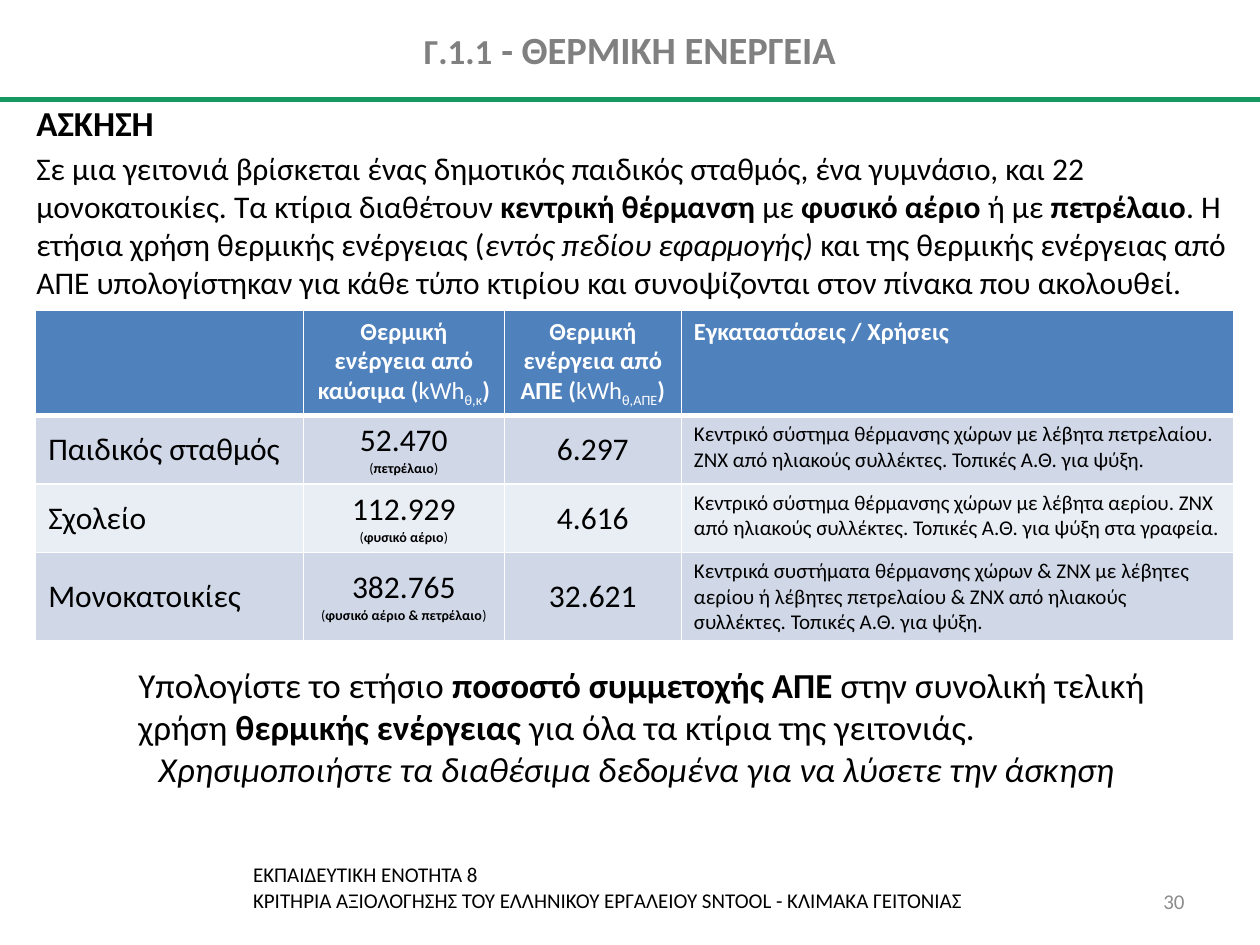
"""Builds the thermal energy exercise slide with its table of buildings."""
from lxml.etree import SubElement
from pptx import Presentation
from pptx.dml.color import RGBColor
from pptx.enum.shapes import MSO_CONNECTOR
from pptx.enum.text import MSO_ANCHOR, PP_ALIGN
from pptx.oxml.ns import qn
from pptx.util import Pt

FONT = "Calibri"
COLORS = {
    "text": "000000", "title": "808080", "number": "8C8C8C", "rule": "159961",
    "white": "FFFFFF", "header": "4F81BD", "odd": "D0D8E8", "even": "E9EDF4",
}
ALIGN = {"left": PP_ALIGN.LEFT, "center": PP_ALIGN.CENTER, "right": PP_ALIGN.RIGHT}

TITLE = [("Γ.1.1", "b", 20), (" - ΘΕΡΜΙΚΗ ΕΝΕΡΓΕΙΑ", "b", 22)]
HEADING = [("ΑΣΚΗΣΗ", "b", 20)]
EXERCISE = [
    ("Σε μια γειτονιά βρίσκεται ένας δημοτικός παιδικός σταθμός, ένα γυμνάσιο, "
     "και 22 μονοκατοικίες. Τα κτίρια διαθέτουν ", "", 18),
    ("κεντρική θέρμανση ", "b", 18),
    ("με", "", 18),
    (" φυσικό αέριο ", "b", 18),
    ("ή με ", "", 18),
    ("πετρέλαιο", "b", 18),
    (". Η ετήσια χρήση θερμικής ενέργειας (", "", 18),
    ("εντός πεδίου εφαρμογής) ", "i", 18),
    ("και της θερμικής ενέργειας από ΑΠΕ υπολογίστηκαν για κάθε τύπο κτιρίου "
     "και συνοψίζονται στον πίνακα που ακολουθεί.", "", 18),
]
QUESTION = [
    ("Υπολογίστε το ετήσιο ", "", 20),
    ("ποσοστό συμμετοχής ΑΠΕ ", "b", 20),
    ("στην συνολική τελική χρήση ", "", 20),
    ("θερμικής ενέργειας ", "b", 20),
    ("για όλα τα κτίρια της γειτονιάς.", "", 20),
]
HINT = [("Χρησιμοποιήστε τα διαθέσιμα δεδομένα για να λύσετε την άσκηση", "i", 20)]
FOOTER = [
    "ΕΚΠΑΙΔΕΥΤΙΚΗ ΕΝΟΤΗΤΑ 8",
    "ΚΡΙΤΗΡΙΑ ΑΞΙΟΛΟΓΗΣΗΣ ΤΟΥ ΕΛΛΗΝΙΚΟΥ ΕΡΓΑΛΕΙΟΥ SNTOOL - ΚΛΙΜΑΚΑ ΓΕΙΤΟΝΙΑΣ",
]
PAGE_NUMBER = "30"

ENERGY_HEADERS = [("Θερμική ενέργεια από καύσιμα (", "θ,κ"),
                  ("Θερμική ενέργεια από ΑΠΕ (", "θ,ΑΠΕ")]
USES_HEADER = "Εγκαταστάσεις / Χρήσεις"
BUILDINGS = [
    ("Παιδικός σταθμός", "52.470", "πετρέλαιο", "6.297",
     "Κεντρικό σύστημα θέρμανσης χώρων με λέβητα πετρελαίου. "
     "ΖΝΧ από ηλιακούς συλλέκτες. Τοπικές Α.Θ. για ψύξη."),
    ("Σχολείο", "112.929", "φυσικό αέριο", "4.616",
     "Κεντρικό σύστημα θέρμανσης χώρων με λέβητα αερίου. "
     "ΖΝΧ από ηλιακούς συλλέκτες. Τοπικές Α.Θ. για ψύξη στα γραφεία."),
    ("Μονοκατοικίες", "382.765", "φυσικό αέριο & πετρέλαιο", "32.621",
     "Κεντρικά συστήματα θέρμανσης χώρων & ΖΝΧ με λέβητες αερίου ή λέβητες "
     "πετρελαίου & ΖΝΧ από ηλιακούς συλλέκτες. Τοπικές Α.Θ. για ψύξη."),
]
COLUMN_WIDTHS = [153, 114.8, 101.2, 315.4]
ROW_HEIGHTS = [59.4, 39.2, 39.2, 50.4]
TABLE_LEFT, TABLE_TOP = 20.4, 177.4


def rgb(name):
    return RGBColor.from_string(COLORS[name])


def write(frame, paragraphs, color="text", align="left"):
    for index, spans in enumerate(paragraphs):
        paragraph = frame.add_paragraph() if index else frame.paragraphs[0]
        paragraph.alignment = ALIGN[align]
        for text, style, size in spans:
            span = paragraph.add_run()
            span.text = text
            font = span.font
            font.name, font.size = FONT, Pt(size)
            font.bold, font.italic = "b" in style, "i" in style
            font.color.rgb = rgb(color)
            if "s" in style:
                font._element.set("baseline", "-25000")


def add_text(page, bounds, paragraphs, color="text", align="left", anchor=MSO_ANCHOR.TOP):
    box = page.shapes.add_textbox(*map(Pt, bounds))
    frame = box.text_frame
    frame.word_wrap = True
    frame.vertical_anchor = anchor
    write(frame, paragraphs, color, align)
    return frame


def set_borders(cell, top, bottom):
    properties = cell._tc.get_or_add_tcPr()
    for side, width in (("L", 1), ("R", 1), ("T", top), ("B", bottom)):
        line = SubElement(properties, qn(f"a:ln{side}"), w=str(Pt(width)))
        fill = SubElement(line, qn("a:solidFill"))
        SubElement(fill, qn("a:srgbClr"), val=COLORS["white"])


def table_rows():
    energy = [[[(label, "b", 14), ("kWh", "", 14), (unit, "s", 14), (")", "b", 14)]]
              for label, unit in ENERGY_HEADERS]
    rows = [[[], *energy, [[(USES_HEADER, "b", 14)]]]]
    for name, fuel, source, renewable, uses in BUILDINGS:
        note = [("(", "", 8), (source, "b", 8), (")", "", 8)]
        rows.append([[[(name, "", 18)]], [[(fuel, "", 18)], note],
                     [[(renewable, "", 18)]], [[(uses, "", 12)]]])
    return rows


def add_energy_table(page):
    rows = table_rows()
    bounds = (TABLE_LEFT, TABLE_TOP, sum(COLUMN_WIDTHS), sum(ROW_HEIGHTS))
    table = page.shapes.add_table(len(rows), len(COLUMN_WIDTHS), *map(Pt, bounds)).table
    for column, width in zip(table.columns, COLUMN_WIDTHS):
        column.width = Pt(width)
    for row, height in zip(table.rows, ROW_HEIGHTS):
        row.height = Pt(height)
    for row_index, row in enumerate(rows):
        shade = "header" if row_index == 0 else "odd" if row_index % 2 else "even"
        for column_index, paragraphs in enumerate(row):
            cell = table.cell(row_index, column_index)
            set_borders(cell, 3 if row_index == 1 else 1, 3 if row_index == 0 else 1)
            cell.fill.solid()
            cell.fill.fore_color.rgb = rgb(shade)
            if row_index and column_index < 3:
                cell.vertical_anchor = MSO_ANCHOR.MIDDLE
            write(cell.text_frame, paragraphs, "text" if row_index else "white",
                  "center" if column_index in (1, 2) else "left")


def add_rule(page):
    rule = page.shapes.add_connector(MSO_CONNECTOR.STRAIGHT, Pt(0), Pt(56.7), Pt(720), Pt(56.7))
    rule.line.color.rgb = rgb("rule")
    rule.line.width = Pt(3)
    SubElement(rule._element.spPr, qn("a:effectLst"))


def main():
    deck = Presentation()
    deck.slide_width, deck.slide_height = Pt(720), Pt(540)
    page = deck.slides.add_slide(deck.slide_layouts[6])
    add_rule(page)
    add_text(page, (137.5, 489, 489, 36), [[(line, "", 12)] for line in FOOTER])
    add_text(page, (635.8, 500.4, 48.2, 28.8), [[(PAGE_NUMBER, "", 12)]],
             "number", "right", MSO_ANCHOR.MIDDLE)
    body = add_text(page, (13.7, 59, 700.6, 116), [HEADING, EXERCISE])
    body.paragraphs[0].line_spacing = 0.8
    body.paragraphs[1].space_before = Pt(3.6)
    add_energy_table(page)
    add_text(page, (0, 0, 720, 56.2), [TITLE], "title", "center", MSO_ANCHOR.MIDDLE)
    add_text(page, (72, 375.8, 632.2, 56.2), [QUESTION])
    add_text(page, (13.7, 423.6, 700.6, 32), [HINT], align="center")
    deck.save("out.pptx")


if __name__ == "__main__":
    main()
